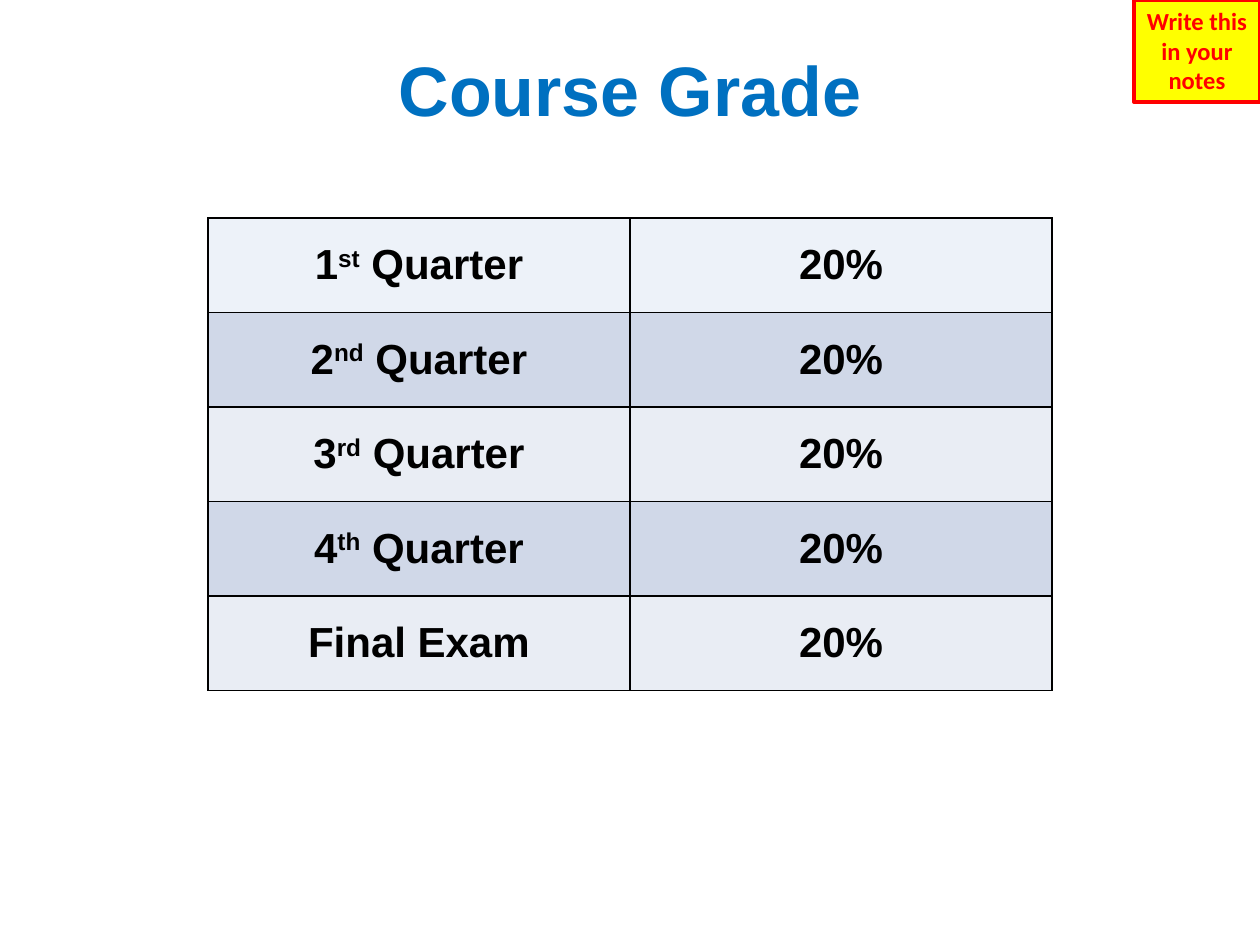
from dataclasses import dataclass

from lxml.etree import SubElement as Sub
from pptx import Presentation
from pptx.dml.color import RGBColor as RGB
from pptx.enum.shapes import MSO_SHAPE as Shape
from pptx.enum.text import MSO_ANCHOR as Anchor, PP_ALIGN as Align
from pptx.oxml.ns import qn
from pptx.util import Pt


@dataclass(frozen=True)
class Theme:
    font: str = "Arial"
    note_font: str = "Calibri"
    title: str = "0070C0"
    ink: str = "000000"
    red: str = "FF0000"
    yellow: str = "FFFF00"
    bands: tuple = ("EDF2F9", "D0D8E8", "E9EDF4", "D0D8E8", "E9EDF4")
    title_size: int = 40
    cell_size: int = 24
    note_size: int = 14


theme = Theme()


def add_run(para, text, size, color, font=theme.font):
    """Add a bold run to a centred paragraph."""
    para.alignment = Align.CENTER
    run = para.add_run()
    run.text = text
    run.font.name = font
    run.font.size = Pt(size)
    run.font.bold = True
    run.font.color.rgb = RGB.from_string(color)
    return run


def add_border(cell):
    """Draw a thin line on all four sides; call before filling the cell."""
    props = cell._tc.get_or_add_tcPr()
    for side in ("lnL", "lnR", "lnT", "lnB"):
        line = Sub(props, qn(f"a:{side}"), w=str(Pt(1)))
        fill = Sub(line, qn("a:solidFill"))
        Sub(fill, qn("a:srgbClr"), val=theme.ink)


deck = Presentation()
deck.slide_width, deck.slide_height = Pt(720), Pt(540)
slide = deck.slides.add_slide(deck.slide_layouts[5])

# Title
title = slide.shapes.title
title.left, title.top, title.width, title.height = Pt(14.4), Pt(21.6), Pt(691.2), Pt(57.6)
title.text_frame.vertical_anchor = Anchor.MIDDLE
add_run(title.text_frame.paragraphs[0], "Course Grade", theme.title_size, theme.title)

# Grade table: each label is base text, raised ending, rest
grades = [
    (("1", "st", " Quarter"), "20%"),
    (("2", "nd", " Quarter"), "20%"),
    (("3", "rd", " Quarter"), "20%"),
    (("4", "th", " Quarter"), "20%"),
    (("Final Exam",), "20%"),
]
frame = slide.shapes.add_table(len(grades), 2, Pt(118.8), Pt(124.56), Pt(482.4), Pt(270))
table = frame.table
table.first_row = False
table.horz_banding = False
for row, (label, share) in enumerate(grades):
    for col, parts in enumerate((label, (share,))):
        cell = table.cell(row, col)
        add_border(cell)
        cell.fill.solid()
        cell.fill.fore_color.rgb = RGB.from_string(theme.bands[row])
        cell.vertical_anchor = Anchor.MIDDLE
        para = cell.text_frame.paragraphs[0]
        for spot, part in enumerate(parts):
            run = add_run(para, part, theme.cell_size, theme.ink)
            if spot == 1:
                run.font._element.set("baseline", "30000")

# Reminder in the corner
note = slide.shapes.add_shape(Shape.RECTANGLE, Pt(648), Pt(0), Pt(72), Pt(58.32))
note.shadow.inherit = False
note.fill.solid()
note.fill.fore_color.rgb = RGB.from_string(theme.yellow)
note.line.color.rgb = RGB.from_string(theme.red)
note.line.width = Pt(2.25)
note.text_frame.word_wrap = True
note.text_frame.vertical_anchor = Anchor.TOP
add_run(note.text_frame.paragraphs[0], "Write this in your notes",
        theme.note_size, theme.red, theme.note_font)

deck.save("out.pptx")
